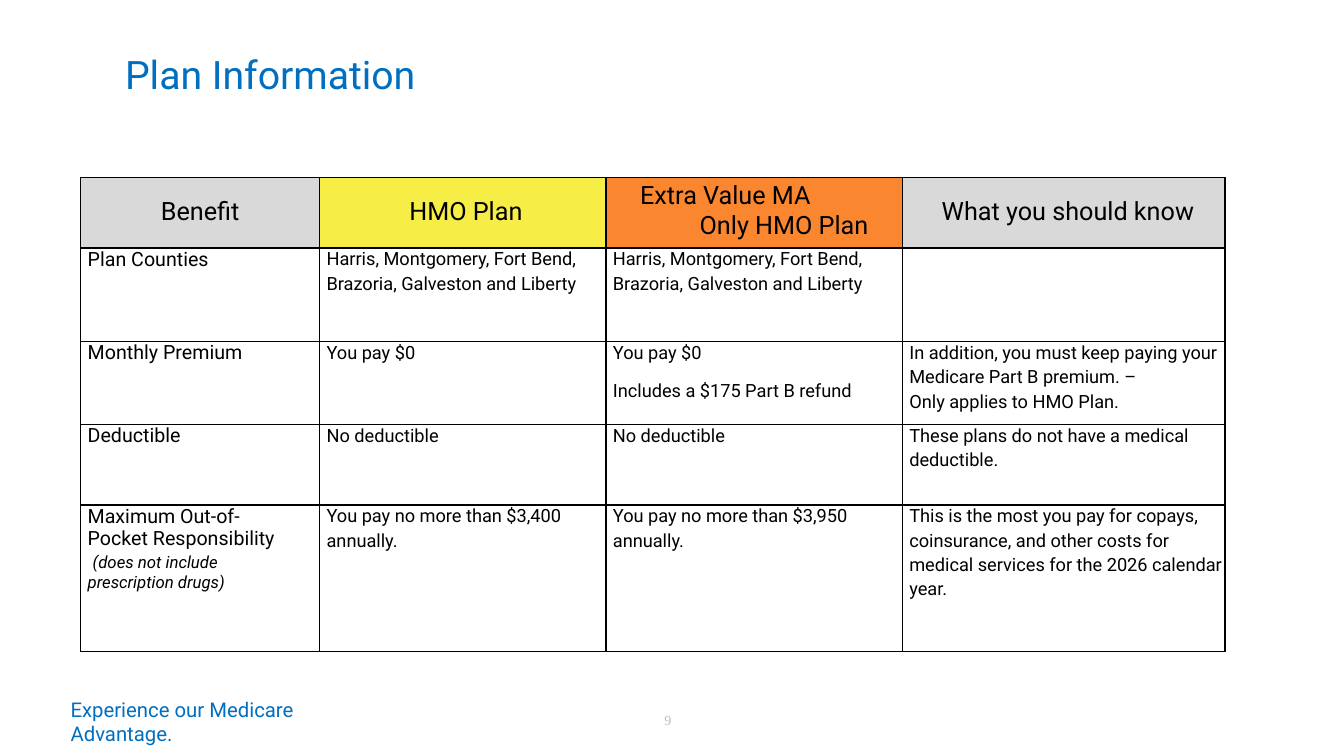
import pptx
import pptx.util
import pptx.dml.color
import pptx.enum.text
import pptx.oxml
import pptx.oxml.ns

Inches = pptx.util.Inches
Pt = pptx.util.Pt
RGBColor = pptx.dml.color.RGBColor

BLUE = RGBColor(0x00, 0x6F, 0xC0)
BLACK = RGBColor(0x00, 0x00, 0x00)
PALE_GRAY = RGBColor(0xBE, 0xBE, 0xBE)
GRAY = RGBColor(0xD9, 0xD9, 0xD9)
YELLOW = RGBColor(0xF6, 0xED, 0x47)
ORANGE = RGBColor(0xFA, 0x87, 0x30)
SANS = "Roboto"
SERIF = "Times New Roman"

COLUMN_WIDTHS = [2.37, 2.84, 2.94, 3.2]
ROW_HEIGHTS = [0.7, 0.93, 0.82, 0.8, 1.45]
HEADERS = [
    ("Benefit", GRAY, 0, 0.2),
    ("HMO Plan", YELLOW, 0.89, 0.2),
    ("Extra Value MA\vOnly HMO Plan", ORANGE, 0.93, 0.04),
    ("What you should know", GRAY, 0.39, 0.2),
]
COUNTIES = ["Harris, Montgomery, Fort Bend,", "Brazoria, Galveston and Liberty"]
BENEFITS = [
    (["Plan Counties"], COUNTIES, COUNTIES, []),
    (["Monthly Premium"], ["You pay $0"],
     ["You pay $0", "Includes a $175 Part B refund"],
     ["In addition, you must keep paying your",
      "Medicare Part B premium. –\vOnly applies to HMO Plan."]),
    (["Deductible"], ["No deductible"], ["No deductible"],
     ["These plans do not have a medical", "deductible."]),
    (["Maximum Out-of-Pocket Responsibility",
      "(does not include prescription drugs)"],
     ["You pay no more than $3,400", "annually."],
     ["You pay no more than $3,950", "annually."],
     ["This is the most you pay for copays,",
      "coinsurance, and other costs for medical services for the 2026 calendar year."]),
]


def set_font(p, size, color, name=SANS, italic=False):
    p.font.size = Pt(size)
    p.font.color.rgb = color
    p.font.name = name
    p.font.italic = italic


def set_margins(frame, left=0, top=0, right=0):
    frame.margin_left = Inches(left)
    frame.margin_top = Inches(top)
    frame.margin_right = Inches(right)
    frame.margin_bottom = 0


def set_indent(p, left, first):
    pPr = p._p.get_or_add_pPr()
    pPr.set("marL", str(Inches(left)))
    pPr.set("indent", str(Inches(first)))


def add_title(s, left, top, width, height):
    sp = s.shapes.title
    sp.left, sp.top = Inches(left), Inches(top)
    sp.width, sp.height = Inches(width), Inches(height)
    tf = sp.text_frame
    tf.text = "Plan Information"
    tf.auto_size = pptx.enum.text.MSO_AUTO_SIZE.NONE
    tf.vertical_anchor = pptx.enum.text.MSO_ANCHOR.TOP
    set_margins(tf, left=0.52, top=0.21)
    p = tf.paragraphs[0]
    p.alignment = pptx.enum.text.PP_ALIGN.LEFT
    set_font(p, 28, BLUE)


def add_label(s, left, top, width, height, text, indent, spacing, size, color, name):
    sp = s.shapes.add_textbox(Inches(left), Inches(top), Inches(width), Inches(height))
    tf = sp.text_frame
    tf.word_wrap = True
    set_margins(tf, left=indent)
    p = tf.paragraphs[0]
    p.text = text
    p.line_spacing = Pt(spacing)
    set_font(p, size, color, name)


def style_cell(cell, color=None):
    tcPr = cell._tc.get_or_add_tcPr()
    for side in "LRTB":
        tcPr.append(pptx.oxml.parse_xml(
            f'<a:ln{side} {pptx.oxml.ns.nsdecls("a")} w="{Pt(1)}">'
            f'<a:solidFill><a:srgbClr val="{BLACK}"/></a:solidFill></a:ln{side}>'))
    if color is None:
        cell.fill.background()
    else:
        cell.fill.solid()
        cell.fill.fore_color.rgb = color


def fill_header(cell, text, color, left, top):
    style_cell(cell, color)
    set_margins(cell, top=top)
    p = cell.text_frame.paragraphs[0]
    p.text = text
    if left:
        set_indent(p, left, -0.59 if "\v" in text else 0)
    else:
        p.alignment = pptx.enum.text.PP_ALIGN.CENTER
    set_font(p, 18, BLACK)


def fill_benefit(cell, lines):
    style_cell(cell)
    set_margins(cell, left=0.07, right=0.35)
    tf = cell.text_frame
    for i, line in enumerate(lines):
        p = tf.add_paragraph() if i else tf.paragraphs[0]
        p.text = line
        if i:
            set_indent(p, 0, 0.05)
            p.space_before = Pt(0.9)
            p.line_spacing = 1.03
            set_font(p, 12, BLACK, italic=True)
        else:
            p.line_spacing = Pt(16.4)
            set_font(p, 14, BLACK)


def fill_detail(cell, lines):
    style_cell(cell)
    set_margins(cell, left=0.07, top=0.01)
    tf = cell.text_frame
    for i, line in enumerate(lines):
        p = tf.add_paragraph() if i else tf.paragraphs[0]
        p.text = line
        if i:
            wraps = len(line) > 40
            p.space_before = Pt(12 if line.startswith("Includes") else 0.1 if wraps else 2.4)
            p.line_spacing = 1.15 if wraps else 1.0
        set_font(p, 13, BLACK)


def add_benefit_table(s, left, top):
    table = s.shapes.add_table(
        len(ROW_HEIGHTS), len(COLUMN_WIDTHS), Inches(left), Inches(top),
        Inches(sum(COLUMN_WIDTHS)), Inches(sum(ROW_HEIGHTS))).table
    table.first_row = False
    table.horz_banding = False
    for column, width in zip(table.columns, COLUMN_WIDTHS):
        column.width = Inches(width)
    for row, height in zip(table.rows, ROW_HEIGHTS):
        row.height = Inches(height)
    for c, header in enumerate(HEADERS):
        fill_header(table.cell(0, c), *header)
    for r, (benefit, *details) in enumerate(BENEFITS, 1):
        fill_benefit(table.cell(r, 0), benefit)
        for c, lines in enumerate(details, 1):
            fill_detail(table.cell(r, c), lines)


def main():
    prs = pptx.Presentation()
    prs.slide_width = Inches(13.33)
    prs.slide_height = Inches(7.5)
    s = prs.slides.add_slide(prs.slide_layouts[5])
    add_title(s, 0.72, 0.29, 8.77, 0.86)
    add_benefit_table(s, 0.8, 1.76)
    add_label(s, 0.69, 6.92, 3.17, 0.26, "Experience our Medicare Advantage.",
              0.01, 17.3, 14.5, BLUE, SANS)
    add_label(s, 6.55, 7.06, 0.24, 0.18, "9", 0.04, 11.9, 10, PALE_GRAY, SERIF)
    prs.save("out.pptx")


if __name__ == "__main__":
    main()
